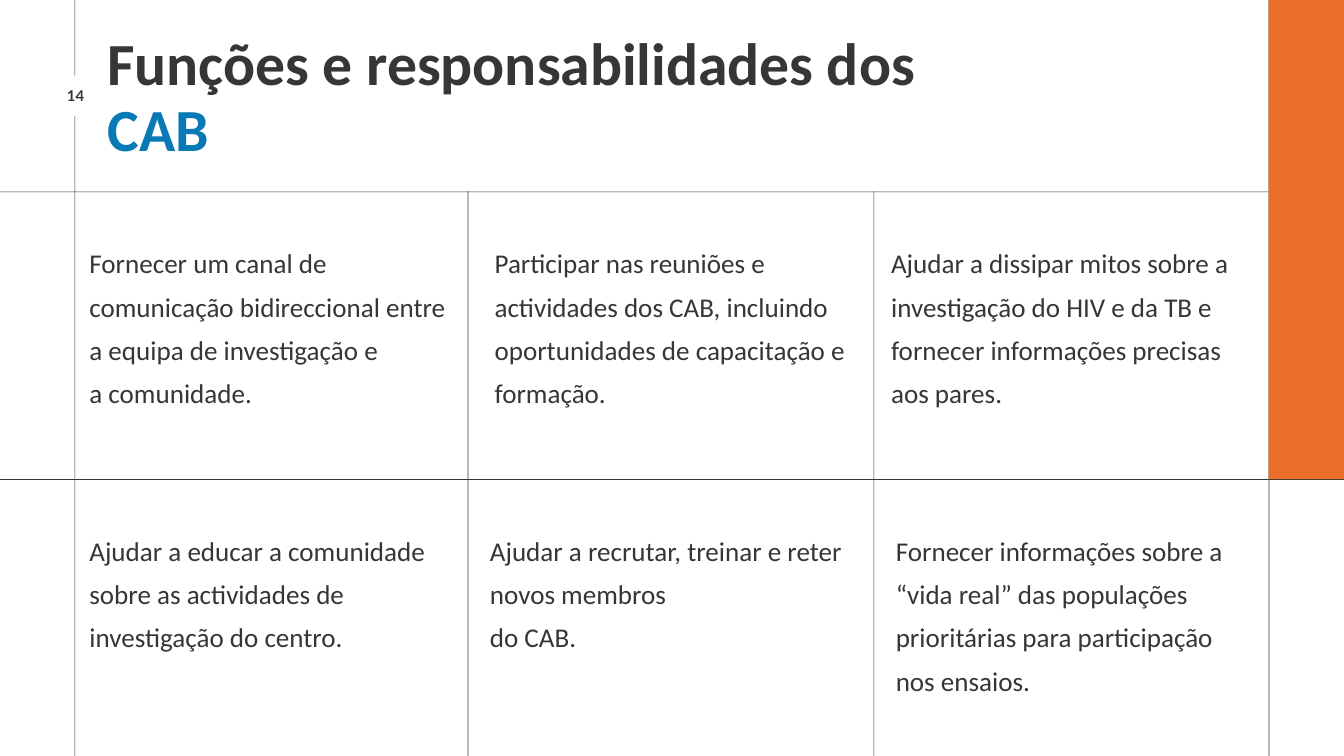
from pptx import Presentation
from pptx.dml.color import RGBColor
from pptx.enum.shapes import MSO_SHAPE
from pptx.enum.text import PP_ALIGN
from pptx.util import Emu, Pt

RECTANGLE = MSO_SHAPE.RECTANGLE
LEFT, CENTER = PP_ALIGN.LEFT, PP_ALIGN.CENTER

PX = 9144  # 100 px to the inch
WIDTH, HEIGHT = 2000, 1125
DARK, BLUE, ORANGE, WHITE = "373636", "077AB5", "EA6D29", "FFFFFF"

# Grid lines
MARGIN_X, COLUMN_2, COLUMN_3, RIGHT_X = 111, 696, 1300, 1888
ROW_1, ROW_2 = 285, 713

# Each row: text top, then (text left, paragraphs) per cell
CELL_WIDTH = 539
ROWS = [
    (351, [
        (133, ["Fornecer um canal de comunicação bidireccional entre "
               "a equipa de investigação e", "a comunidade."]),
        (736, ["Participar nas reuniões e actividades dos CAB, incluindo "
               "oportunidades de capacitação e formação."]),
        (1326, ["Ajudar a dissipar mitos sobre a investigação do HIV e da TB "
                "e fornecer informações precisas", "aos pares."]),
    ]),
    (779, [
        (133, ["Ajudar a educar a comunidade sobre as actividades de "
               "investigação do centro."]),
        (729, ["Ajudar a recrutar, treinar e reter novos membros", "do CAB."]),
        (1333, ["Fornecer informações sobre a “vida real” das populações "
                "prioritárias para participação", "nos ensaios."]),
    ]),
]


def px(*values):
    return [Emu(value * PX) for value in values]


def color(hex_value):
    return RGBColor.from_string(hex_value)


def add_block(slide, left, top, width, height, fill=DARK):
    shape = slide.shapes.add_shape(RECTANGLE, *px(left, top, width, height))
    shape.shadow.inherit = False
    shape.fill.solid()
    shape.fill.fore_color.rgb = color(fill)
    shape.line.fill.background()


def add_text(slide, box, paragraphs, size, spacing, font="Calibri",
             bold=False, align=LEFT):
    """Each paragraph is a list of (text, colour) runs."""
    frame = slide.shapes.add_textbox(*px(*box)).text_frame
    frame.word_wrap = True
    frame.margin_left = frame.margin_right = 0
    frame.margin_top = frame.margin_bottom = 0
    for index, runs in enumerate(paragraphs):
        paragraph = frame.add_paragraph() if index else frame.paragraphs[0]
        paragraph.alignment = align
        paragraph.line_spacing = Pt(spacing)
        paragraph.font.name = font
        paragraph.font.size = Pt(size)
        paragraph.font.bold = bold
        for text, run_color in runs:
            run = paragraph.add_run()
            run.text = text
            run.font.color.rgb = color(run_color)


def add_page_number(slide, left, top, width, height):
    add_block(slide, left, top, width, height, WHITE)
    add_text(slide, (left + 7, top + 19, width - 13, 25), [[("14", DARK)]],
             16, 17.6, font="Lato", bold=True, align=CENTER)


def add_grid(slide):
    for y in (ROW_1, ROW_2):
        add_block(slide, 0, y, WIDTH, 1)
    add_block(slide, RIGHT_X, 0, 1, HEIGHT)
    for x in (COLUMN_2, COLUMN_3):
        add_block(slide, x, ROW_1, 1, HEIGHT - ROW_1)
    add_block(slide, RIGHT_X, 0, WIDTH - RIGHT_X, ROW_2, ORANGE)


def add_cells(slide):
    for top, cells in ROWS:
        for left, texts in cells:
            add_text(slide, (left, top, CELL_WIDTH, 316),
                     [[(text, DARK)] for text in texts], 29, 46.4)


def main():
    presentation = Presentation()
    presentation.slide_width, presentation.slide_height = px(WIDTH, HEIGHT)
    slide = presentation.slides.add_slide(presentation.slide_layouts[6])

    # Margin line, broken by the page number
    add_block(slide, MARGIN_X, 0, 1, HEIGHT)
    add_page_number(slide, 69, 112, 86, 61)

    # Grid and orange panel
    add_grid(slide)

    # Title
    add_text(slide, (160, 48, 1313, 196),
             [[("Funções e responsabilidades dos", DARK), (" CAB", BLUE)]],
             64, 70.4, bold=True)

    # Responsibilities
    add_cells(slide)

    presentation.save("out.pptx")


if __name__ == "__main__":
    main()
